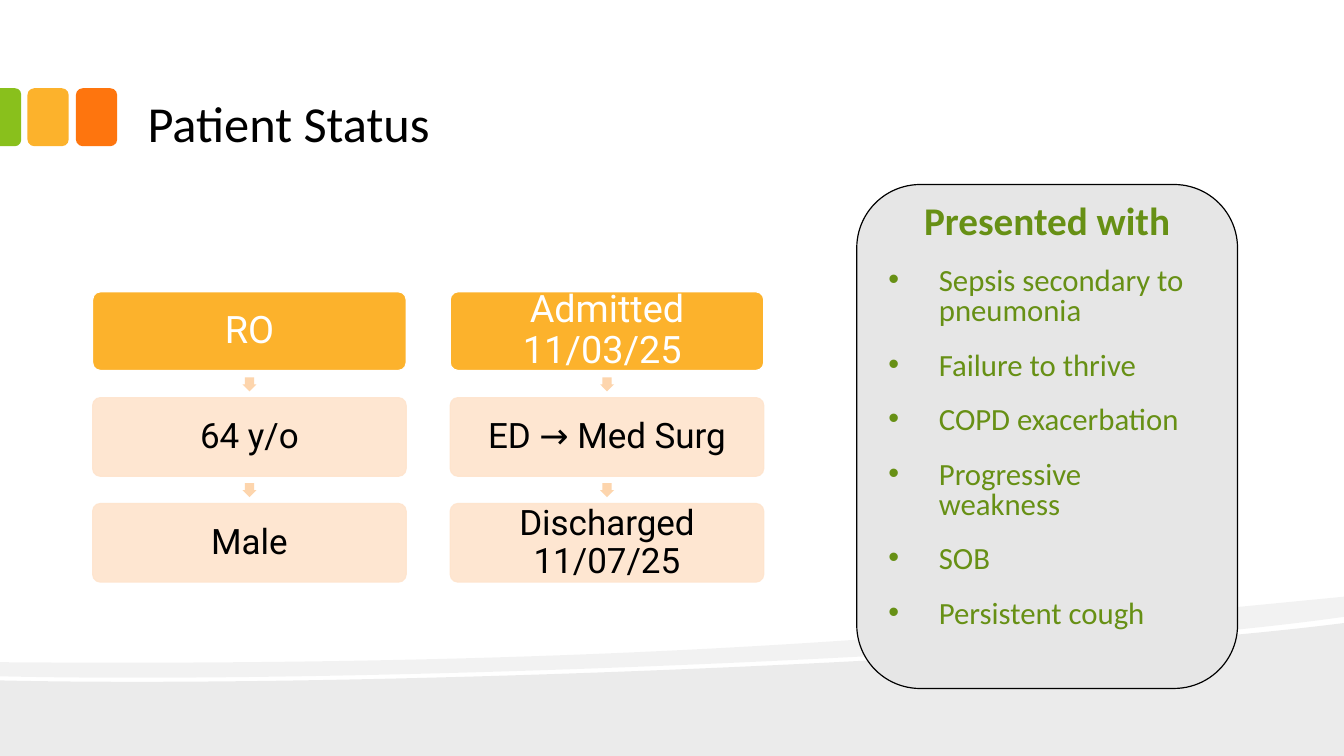
from pptx import Presentation
from pptx.dml.color import RGBColor
from pptx.enum.shapes import MSO_SHAPE
from pptx.enum.text import MSO_ANCHOR, PP_ALIGN
from pptx.oxml.ns import qn
from pptx.util import Pt
from lxml import etree

BLACK = RGBColor(0x00, 0x00, 0x00)
WHITE = RGBColor(0xFF, 0xFF, 0xFF)
ORANGE = RGBColor(0xFE, 0x75, 0x0E)
AMBER = RGBColor(0xFC, 0xB2, 0x2C)
GREEN = RGBColor(0x89, 0xC0, 0x1C)
DARK_GREEN = RGBColor(0x67, 0x90, 0x15)
PEACH = RGBColor(0xFE, 0xE4, 0xCD)
ARROW_PEACH = RGBColor(0xFD, 0xD5, 0xAD)
GREY = RGBColor(0xE6, 0xE6, 0xE6)

ROUNDED = MSO_SHAPE.ROUNDED_RECTANGLE
TAB = MSO_SHAPE.ROUND_2_SAME_RECTANGLE
DOWN_ARROW = MSO_SHAPE.DOWN_ARROW
TOP, MIDDLE, BOTTOM = MSO_ANCHOR.TOP, MSO_ANCHOR.MIDDLE, MSO_ANCHOR.BOTTOM
LEFT, CENTER = PP_ALIGN.LEFT, PP_ALIGN.CENTER

SLIDE_W, SLIDE_H = 960, 540
CARD_W, CARD_H, CARD_STEP = 224, 56.2, 75.6
CARD_TOP, CARD_LEFTS = 208.4, (66.2, 321.6)
ARROW = 10

COLUMNS = [
    ["RO", "64 y/o", "Male"],
    ["Admitted 11/03/25 ", "ED → Med Surg", "Discharged 11/07/25"],
]
SYMPTOMS = [
    "Sepsis secondary to pneumonia", "Failure to thrive", "COPD exacerbation",
    "Progressive weakness", "SOB", "Persistent cough",
]


def set_all(obj, **values):
    for name, value in values.items():
        setattr(obj, name, value)


def set_alpha(fill_owner, percent):
    """Make every solid colour below an element partly transparent."""
    for clr in fill_owner.iter(qn("a:srgbClr")):
        etree.SubElement(clr, qn("a:alpha"), val=str(percent * 1000))


def paint(sp, fill, line=None, alpha=None):
    sp.shadow.inherit = False
    sp.fill.solid()
    sp.fill.fore_color.rgb = fill
    if line is None:
        sp.line.fill.background()
    else:
        sp.line.color.rgb = line
        sp.line.width = Pt(0.85)
    if alpha:
        set_alpha(sp._element.spPr, alpha)


def add_block(slide, kind, box, fill, line=None, alpha=None, adj=()):
    sp = slide.shapes.add_shape(kind, *map(Pt, box))
    for i, value in enumerate(adj):
        sp.adjustments[i] = value
    paint(sp, fill, line, alpha)
    return sp


def set_frame(sp, anchor, side, top):
    tf = sp.text_frame
    set_all(tf, word_wrap=True, vertical_anchor=anchor,
            margin_left=Pt(side), margin_right=Pt(side),
            margin_top=Pt(top), margin_bottom=Pt(top))
    return tf


def write(p, text, size, color, font="Calibri", bold=False, **layout):
    set_all(p, **layout)
    r = p.add_run()
    r.text = text
    set_all(r.font, size=Pt(size), name=font, bold=bold)
    r.font.color.rgb = color


def add_bullet(p, indent, color):
    pPr = p._p.get_or_add_pPr()
    pPr.set("marL", str(Pt(indent)))
    pPr.set("indent", str(-Pt(indent)))
    clr = etree.SubElement(pPr, qn("a:buClr"))
    etree.SubElement(clr, qn("a:srgbClr"), val=str(color))
    etree.SubElement(pPr, qn("a:buFont"), typeface="Arial")
    etree.SubElement(pPr, qn("a:buChar"), char="•")


def add_wave(slide, points, curve_starts, alpha):
    """Draw an outline; the three points from each curve start form one cubic curve."""
    points = [(Pt(x), Pt(y)) for x, y in points]
    builder = slide.shapes.build_freeform(*points[0], scale=1.0)
    builder.add_line_segments(points[1:], close=True)
    sp = builder.convert_to_shape()
    segments = list(sp._element.iter(qn("a:lnTo")))
    for start in curve_starts:
        first, *others = segments[start - 1:start + 2]
        first.tag = qn("a:cubicBezTo")
        for segment in others:
            first.append(segment[0])
            segment.getparent().remove(segment)
    paint(sp, BLACK, alpha=alpha)


def add_background(slide):
    # Waves along the bottom edge
    add_wave(slide, [
        (SLIDE_W, 445), (SLIDE_W, SLIDE_H), (0, SLIDE_H), (0, 486),
        (253.4, 491.8), (750.2, 471.6), (SLIDE_W, 445),
    ], [4], 8)
    add_wave(slide, [
        (SLIDE_W, 426.2), (SLIDE_W, 440.6),
        (903.6, 448.6), (827.3, 455.8), (740.9, 461.5),
        (502.6, 477.4), (185.8, 487.4), (0, 483.1), (0, 473),
        (469.4, 476.6), (699.1, 451.4), (SLIDE_W, 426.2),
    ], [2, 5, 9], 5)
    # Colour tabs beside the title
    for left, color in ((54.2, ORANGE), (19.6, AMBER)):
        add_block(slide, ROUNDED, (left, 63, 29.5, 41.4), color)
    tab = add_block(slide, TAB, (-13.1, 76.2, 41.4, 15), GREEN, adj=(0.29, 0))
    tab.rotation = 90


def add_title(slide, text):
    title = slide.shapes.title
    set_all(title, left=Pt(96), top=Pt(12), width=Pt(767.5), height=Pt(101.8))
    tf = set_frame(title, BOTTOM, 9.4, 5)
    write(tf.paragraphs[0], text, 36, BLACK, alignment=LEFT)


def add_column(slide, left, texts):
    for row, text in enumerate(texts):
        top = CARD_TOP + row * CARD_STEP
        box = (left, top, CARD_W, CARD_H)
        if row == 0:
            card = add_block(slide, ROUNDED, box, AMBER, WHITE, adj=(0.1,))
            size, color, inset = 27, WHITE, 2.7
        else:
            add_block(slide, DOWN_ARROW,
                      (left + (CARD_W - ARROW) / 2, top - 14.5, ARROW, ARROW),
                      ARROW_PEACH, adj=(0.67, 0.5))
            card = add_block(slide, ROUNDED, box, PEACH, PEACH, 90, (0.1,))
            size, color, inset = 25, BLACK, 2.5
        tf = set_frame(card, MIDDLE, inset, inset)
        write(tf.paragraphs[0], text, size, color, "Roboto",
              alignment=CENTER, line_spacing=0.9)


def add_symptom_panel(slide, heading, symptoms):
    panel = add_block(slide, ROUNDED, (612, 131.8, 272, 360), GREY, BLACK)
    tf = set_frame(panel, TOP, 9.4, 1.5)
    write(tf.paragraphs[0], heading, 28, DARK_GREEN, bold=True,
          alignment=CENTER, line_spacing=0.8)
    for symptom in symptoms:
        p = tf.add_paragraph()
        write(p, symptom, 22, DARK_GREEN, alignment=LEFT,
              line_spacing=0.8, space_before=Pt(18))
        add_bullet(p, 36, DARK_GREEN)


def main():
    prs = Presentation()
    set_all(prs, slide_width=Pt(SLIDE_W), slide_height=Pt(SLIDE_H))
    slide = prs.slides.add_slide(prs.slide_layouts[5])
    add_background(slide)
    add_title(slide, "Patient Status")
    for left, texts in zip(CARD_LEFTS, COLUMNS):
        add_column(slide, left, texts)
    add_symptom_panel(slide, "Presented with", SYMPTOMS)
    prs.save("out.pptx")


if __name__ == "__main__":
    main()
